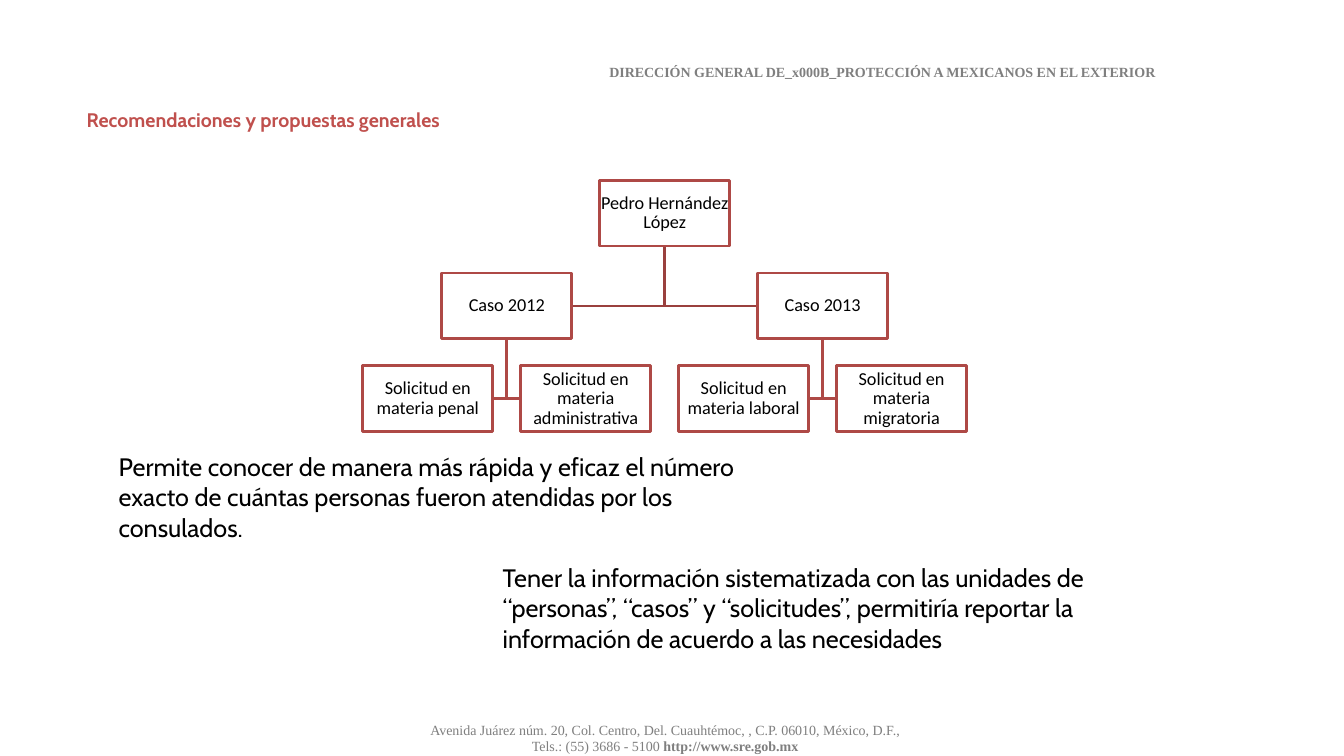
from pptx import Presentation
from pptx.dml.color import RGBColor
from pptx.enum.shapes import MSO_SHAPE
from pptx.enum.text import MSO_ANCHOR, MSO_AUTO_SIZE, PP_ALIGN
from pptx.util import Cm, Pt

RECT = MSO_SHAPE.RECTANGLE
TOP, MIDDLE = MSO_ANCHOR.TOP, MSO_ANCHOR.MIDDLE
LEFT, CENTER, RIGHT, JUSTIFY = PP_ALIGN.LEFT, PP_ALIGN.CENTER, PP_ALIGN.RIGHT, PP_ALIGN.JUSTIFY
NO_FIT = MSO_AUTO_SIZE.NONE

BLACK = RGBColor(0x00, 0x00, 0x00)
WHITE = RGBColor(0xFF, 0xFF, 0xFF)
GRAY = RGBColor(0x7F, 0x7F, 0x7F)
RED = RGBColor(0xC0, 0x50, 0x4D)
BOX_RED = RGBColor(0xAE, 0x49, 0x46)
ROOT_RED = RGBColor(0x9A, 0x40, 0x3E)

HEADER = {"name": "Times New Roman", "size": Pt(10), "bold": True}
FOOTER = {"name": "Times New Roman", "size": Pt(10), "bold": False}
TITLE = {"name": "Cabin", "size": Pt(14), "bold": True}
BODY = {"name": "Cabin", "size": Pt(18)}
NODE = {"name": "Calibri", "size": Pt(13)}

BOX_W, BOX_H = 3.28, 1.66
TREE_X, TREE_Y = 16.75, 4.54
LEVEL_STEP, BRANCH = 2.34, 3.98

TREE = ("Pedro Hernández López", [
    ("Caso 2012", [
        ("Solicitud en materia penal", []),
        ("Solicitud en materia administrativa", []),
    ]),
    ("Caso 2013", [
        ("Solicitud en materia laboral", []),
        ("Solicitud en materia migratoria", []),
    ]),
])


def set_attrs(target, values):
    for key, value in values.items():
        setattr(target, key, value)


def add_run(p, text, font, color):
    r = p.add_run()
    r.text = text
    set_attrs(r.font, font)
    r.font.color.rgb = color


def write(tf, lines, font, color, align, anchor):
    set_attrs(tf, {"word_wrap": True, "auto_size": NO_FIT, "vertical_anchor": anchor})
    for i, text in enumerate(lines):
        p = tf.add_paragraph() if i else tf.paragraphs[0]
        p.alignment = align
        add_run(p, text, font, color)


def add_text(s, x, y, w, h, lines, font, color, align, anchor):
    sp = s.shapes.add_textbox(Cm(x), Cm(y), Cm(w), Cm(h))
    write(sp.text_frame, lines, font, color, align, anchor)
    return sp.text_frame


def add_title(s, text):
    sp = s.shapes.title
    set_attrs(sp, {"left": Cm(1.93), "top": Cm(2.59), "width": Cm(26.7), "height": Cm(1.75)})
    write(sp.text_frame, [text], TITLE, RED, JUSTIFY, TOP)


def add_box(s, x, y, text):
    sp = s.shapes.add_shape(RECT, Cm(x - BOX_W / 2), Cm(y), Cm(BOX_W), Cm(BOX_H))
    sp.shadow.inherit = False
    sp.fill.solid()
    sp.fill.fore_color.rgb = WHITE
    set_attrs(sp.line, {"width": Pt(2)})
    sp.line.color.rgb = BOX_RED
    tf = sp.text_frame
    margins = ("margin_left", "margin_right", "margin_top", "margin_bottom")
    set_attrs(tf, dict.fromkeys(margins, Cm(0.02)))
    write(tf, [text], NODE, BLACK, CENTER, MIDDLE)
    tf.paragraphs[0].line_spacing = 0.9


def add_branch(s, x, y, end_x, end_y, color):
    builder = s.shapes.build_freeform(Cm(x), Cm(y))
    builder.add_line_segments([(Cm(x), Cm(end_y)), (Cm(end_x), Cm(end_y))], close=False)
    sp = builder.convert_to_shape()
    sp.shadow.inherit = False
    sp.fill.background()
    sp.line.width = Pt(2)
    sp.line.color.rgb = color


def add_tree(s, node, x, y, spread, color):
    text, children = node
    for child, side in zip(children, (-1, 1)):
        child_x, child_y = x + side * spread, y + LEVEL_STEP
        edge = child_x - side * BOX_W / 2
        add_branch(s, x, y + BOX_H, edge, child_y + BOX_H / 2, color)
        add_tree(s, child, child_x, child_y, spread / 2, BOX_RED)
    add_box(s, x, y, text)


def main():
    prs = Presentation()
    set_attrs(prs, {"slide_width": Cm(33.87), "slide_height": Cm(19.05)})
    s = prs.slides.add_slide(prs.slide_layouts[5])

    add_text(s, 6.5, 0.43, 22.86, 2.77,
             ["DIRECCIÓN GENERAL DE\vPROTECCIÓN A MEXICANOS EN EL EXTERIOR"],
             HEADER, GRAY, RIGHT, MIDDLE)
    tf = add_text(s, 8.76, 18.14, 16, 0.91,
                  ["Avenida Juárez núm. 20, Col. Centro, Del. Cuauhtémoc, , C.P. 06010, México, D.F.,",
                   "Tels.: (55) 3686 - 5100 "],
                  FOOTER, GRAY, CENTER, MIDDLE)
    add_run(tf.paragraphs[1], "http://www.sre.gob.mx", HEADER, GRAY)

    add_title(s, "Recomendaciones y propuestas generales")
    add_tree(s, TREE, TREE_X, TREE_Y, BRANCH, ROOT_RED)

    add_text(s, 2.74, 11.25, 16.94, 2.57,
             ["Permite conocer de manera más rápida y eficaz el número exacto de cuántas "
              "personas fueron atendidas por los consulados."],
             BODY, BLACK, LEFT, TOP)
    add_text(s, 12.42, 14.05, 16.94, 2.57,
             ["Tener la información sistematizada con las unidades de “personas”, “casos” y "
              "“solicitudes”, permitiría reportar la información de acuerdo a las necesidades"],
             BODY, BLACK, LEFT, TOP)
    prs.save("out.pptx")


if __name__ == "__main__":
    main()
